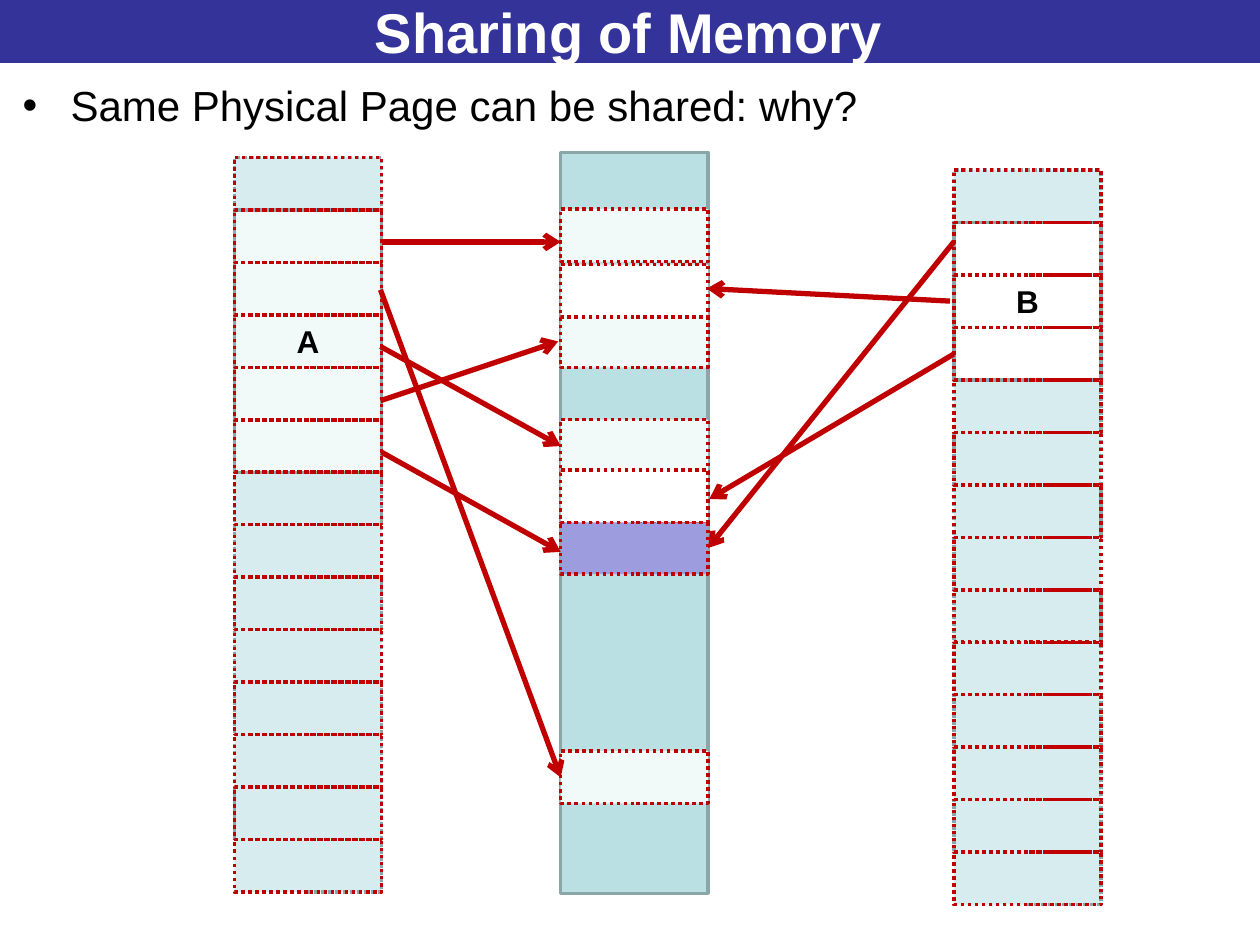
from pptx import Presentation
from pptx.dml.color import RGBColor
from pptx.enum.dml import MSO_LINE
from pptx.enum.shapes import MSO_CONNECTOR, MSO_SHAPE
from pptx.enum.text import MSO_ANCHOR, MSO_AUTO_SIZE, PP_ALIGN
from pptx.oxml.ns import qn
from pptx.util import Inches, Pt
from lxml.etree import SubElement

PAGE_WIDTH, PAGE_COUNT = 1.17, 14
SPACE_HEIGHT = 5.83
PAGE_HEIGHT = SPACE_HEIGHT / PAGE_COUNT
LEFT_A, LEFT_MEMORY, LEFT_B = 1.86, 4.45, 7.57
RED, GREY, MINT, WHITE, BLACK = "C00000", "8AA6A8", "F1F9F9", "FFFFFF", "000000"

FRAMES = [
    (1.66, MINT), (5.96, MINT), (3.33, MINT), (2.5, MINT),
    (4.14, "9C9CDF"), (2.1, WHITE), (3.73, WHITE),
]
MAPPINGS = [
    ((3.03, 1.92), (4.45, 1.92)),
    ((3.02, 2.3), (4.45, 6.17)),
    ((3.02, 2.75), (4.45, 3.54)),
    ((3.02, 3.18), (4.43, 2.71)),
    ((3.03, 3.59), (4.45, 4.38)),
    ((7.57, 1.92), (5.62, 4.35)),
    ((7.54, 2.39), (5.61, 2.29)),
    ((7.57, 2.81), (5.63, 3.96)),
]


def color(hex_string):
    """Turn a hex string into a colour."""
    return RGBColor.from_string(hex_string)


def add_run(paragraph, text, size, hex_string, bold=False):
    """Append one formatted run to a paragraph."""
    run = paragraph.add_run()
    run.text = text
    run.font.name = "Arial"
    run.font.size = Pt(size)
    run.font.bold = bold
    run.font.color.rgb = color(hex_string)


def move(shape, box):
    """Place a shape at a (left, top, width, height) box in inches."""
    shape.left, shape.top, shape.width, shape.height = map(Inches, box)


def add_box(slide, box, fill, line, dotted=True):
    """Draw a rectangle with an optional fill and a two-point outline."""
    shape = slide.shapes.add_shape(MSO_SHAPE.RECTANGLE, *map(Inches, box))
    shape.shadow.inherit = False
    if fill:
        shape.fill.solid()
        shape.fill.fore_color.rgb = color(fill)
    else:
        shape.fill.background()
    shape.line.color.rgb = color(line)
    shape.line.width = Pt(2)
    if dotted:
        shape.line.dash_style = MSO_LINE.ROUND_DOT
    return shape


def add_arrow(slide, start, end):
    """Draw a red arrow from one point to another."""
    arrow = slide.shapes.add_connector(
        MSO_CONNECTOR.STRAIGHT, *map(Inches, start + end))
    arrow.line.color.rgb = color(RED)
    arrow.line.width = Pt(3)
    properties = arrow.element.spPr
    SubElement(properties.find(qn("a:ln")), qn("a:tailEnd"), type="arrow")
    SubElement(properties, qn("a:effectLst"))


def fill_title(slide, box, text):
    """Format the title placeholder as a coloured banner."""
    title = slide.shapes.title
    move(title, box)
    title.fill.solid()
    title.fill.fore_color.rgb = color("333399")
    title.text_frame.auto_size = MSO_AUTO_SIZE.NONE
    title.text_frame.vertical_anchor = MSO_ANCHOR.MIDDLE
    paragraph = title.text_frame.paragraphs[0]
    paragraph.alignment = PP_ALIGN.CENTER
    add_run(paragraph, text, 32, WHITE, bold=True)


def fill_body(slide, box, text):
    """Write the bullet into the body placeholder."""
    body = slide.placeholders[1]
    move(body, box)
    body.text_frame.auto_size = MSO_AUTO_SIZE.NONE
    paragraph = body.text_frame.paragraphs[0]
    add_run(paragraph, text, 24, BLACK)
    properties = paragraph._p.get_or_add_pPr()
    properties.set("marL", str(Inches(0.38)))
    properties.set("indent", str(Inches(-0.38)))
    SubElement(properties, qn("a:buChar"), char="•")


def add_address_space(slide, box, name, used_pages, used_fill):
    """Draw a process's virtual pages, with its used pages named."""
    left, top, width, height = box
    page = height / PAGE_COUNT
    add_box(slide, box, "D6ECEE", GREY)
    used_box = (left, top + page, width, used_pages * page)
    used = add_box(slide, used_box, used_fill, GREY, dotted=False)
    used.text_frame.vertical_anchor = MSO_ANCHOR.MIDDLE
    paragraph = used.text_frame.paragraphs[0]
    paragraph.alignment = PP_ALIGN.CENTER
    add_run(paragraph, name, 18, BLACK, bold=True)
    for index in range(PAGE_COUNT):
        add_box(slide, (left, top + index * page, width, page), None, RED)


def add_memory(slide, box):
    """Draw physical memory and its mapped frames."""
    left, _, width, _ = box
    add_box(slide, box, "BBE0E3", GREY, dotted=False)
    for top, fill in FRAMES:
        add_box(slide, (left, top, width, PAGE_HEIGHT), fill, RED)


def main():
    """Build the slide and save it."""
    presentation = Presentation()
    presentation.slide_width, presentation.slide_height = Inches(10), Inches(7.5)
    slide = presentation.slides.add_slide(presentation.slide_layouts[1])
    fill_title(slide, (-0.02, 0, 10.02, 0.5), "Sharing of Memory")
    fill_body(slide, (0.08, 0.58, 9.83, 6.67),
              "Same Physical Page can be shared: why?")
    add_address_space(slide, (LEFT_A, 1.25, PAGE_WIDTH, SPACE_HEIGHT), "A", 5, MINT)
    add_memory(slide, (LEFT_MEMORY, 1.21, PAGE_WIDTH, 5.88))
    add_address_space(slide, (LEFT_B, 1.35, PAGE_WIDTH, SPACE_HEIGHT), "B", 3, WHITE)
    for start, end in MAPPINGS:
        add_arrow(slide, start, end)
    presentation.save("out.pptx")


if __name__ == "__main__":
    main()
